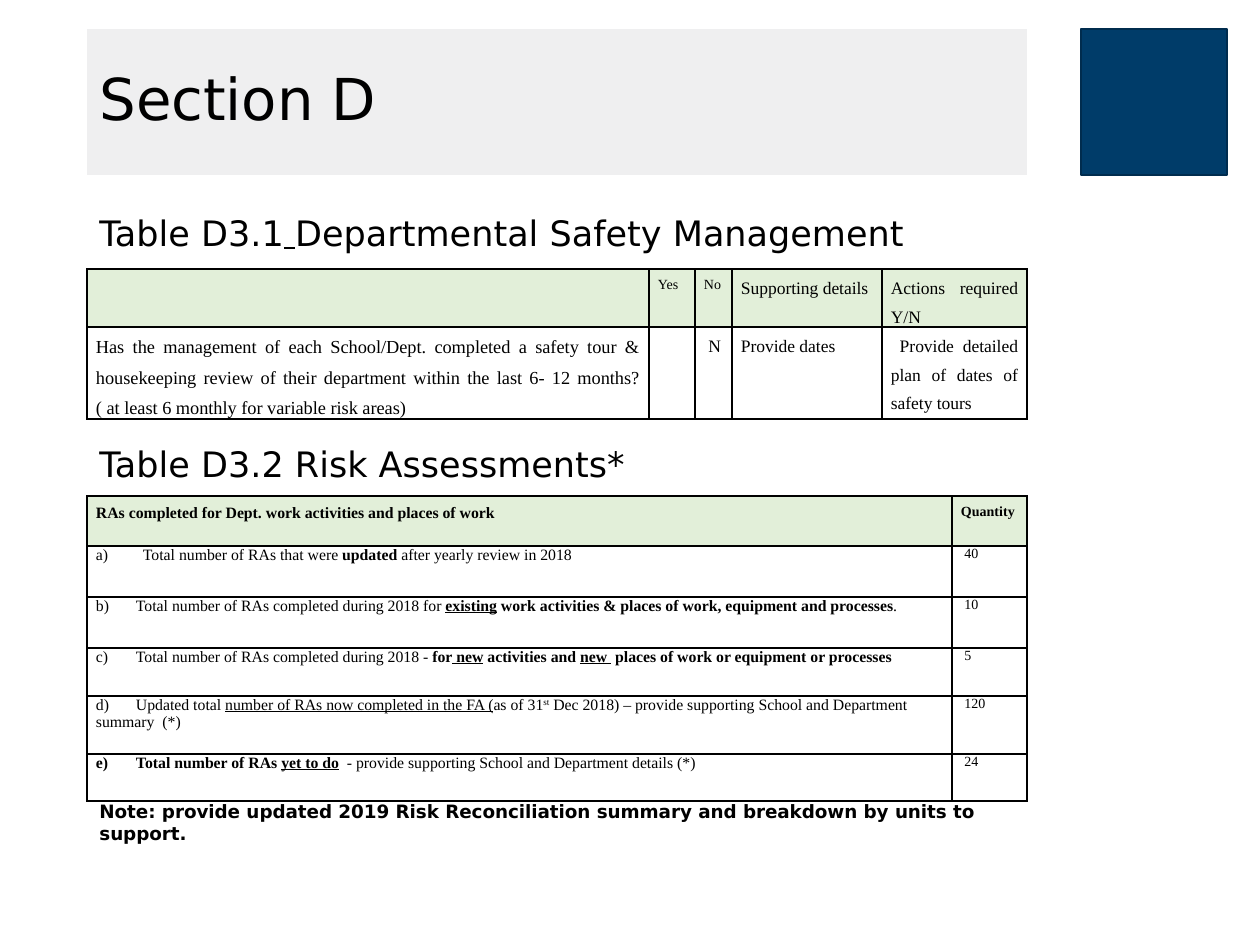
from dataclasses import dataclass
from typing import NamedTuple

import lxml.etree
import pptx
import pptx.dml.color
import pptx.enum.shapes
import pptx.enum.text
import pptx.oxml.ns
import pptx.util

SANS = "DejaVu Sans"
SERIF = "Times New Roman"
BLACK = "000000"
HEADER_GREEN = "E2EFD9"
LEFT, WIDTH = 87, 940
JUSTIFY = pptx.enum.text.PP_ALIGN.JUSTIFY
TOP = pptx.enum.text.MSO_ANCHOR.TOP
MIDDLE = pptx.enum.text.MSO_ANCHOR.MIDDLE


class Span(NamedTuple):
    text: str
    bold: bool = False
    underline: bool = False
    raised: bool = False


@dataclass
class Cell:
    spans: list[Span]
    size: float
    justified: bool = False
    spacing: float = 1.0
    tab: int = 0


@dataclass
class Table:
    top: int
    columns: list[int]
    heights: list[int]
    rows: list[list[Cell]]


@dataclass
class Caption:
    top: int
    height: int
    spans: list[Span]
    size: float
    anchor: pptx.enum.text.MSO_ANCHOR = TOP


def px(length: int) -> pptx.util.Emu:
    return pptx.util.Emu(round(length * 914400 / 126))


def rgb(value: str) -> pptx.dml.color.RGBColor:
    return pptx.dml.color.RGBColor.from_string(value)


def add_element(parent, tag: str, **attributes: str):
    return lxml.etree.SubElement(parent, pptx.oxml.ns.qn(tag), attributes)


def write(para, spans: list[Span], size: float, font: str) -> None:
    para.font.name = font
    para.font.size = pptx.util.Pt(size)
    para.font.color.rgb = rgb(BLACK)
    for span in spans:
        run = para.add_run()
        run.text = span.text
        if span.bold:
            run.font.bold = True
        if span.underline:
            run.font.underline = True
        if span.raised:
            run.font._element.set("baseline", "30000")


def add_rectangle(page, left: int, width: int, fill: str, line: str = ""):
    box = page.shapes.add_shape(
        pptx.enum.shapes.MSO_SHAPE.RECTANGLE, px(left), px(29), px(width), px(146))
    box.shadow.inherit = False
    box.fill.solid()
    box.fill.fore_color.rgb = rgb(fill)
    if line:
        box.line.color.rgb = rgb(line)
        box.line.width = pptx.util.Pt(1)
    else:
        box.line.fill.background()
    return box


def add_title(page, text: str) -> None:
    frame = add_rectangle(page, LEFT, WIDTH, "EFEFF0").text_frame
    frame.vertical_anchor = MIDDLE
    para = frame.paragraphs[0]
    para.alignment = pptx.enum.text.PP_ALIGN.LEFT
    para.line_spacing = 0.9
    write(para, [Span(text)], 33, SANS)


def add_caption(page, caption: Caption) -> None:
    box = page.shapes.add_textbox(px(LEFT), px(caption.top), px(WIDTH), px(caption.height))
    frame = box.text_frame
    frame.word_wrap = True
    frame.vertical_anchor = caption.anchor
    if caption.anchor == MIDDLE:
        frame.margin_bottom = 0
    write(frame.paragraphs[0], caption.spans, caption.size, SANS)


def add_borders(cell) -> None:
    properties = cell._tc.get_or_add_tcPr()
    for index, side in enumerate(("a:lnL", "a:lnR", "a:lnT", "a:lnB")):
        line = properties.makeelement(pptx.oxml.ns.qn(side), {"w": "12700"})
        add_element(add_element(line, "a:solidFill"), "a:srgbClr", val=BLACK)
        properties.insert(index, line)


def fill_cell(target, cell: Cell, header: bool) -> None:
    target.margin_left = target.margin_right = px(9)
    target.margin_top = target.margin_bottom = 0
    if header:
        target.fill.solid()
        target.fill.fore_color.rgb = rgb(HEADER_GREEN)
    else:
        target.fill.background()
    add_borders(target)
    para = target.text_frame.paragraphs[0]
    if cell.tab:
        stops = add_element(para._p.get_or_add_pPr(), "a:tabLst")
        add_element(stops, "a:tab", pos=str(px(cell.tab)), algn="l")
    if cell.justified:
        para.alignment = JUSTIFY
    para.line_spacing = cell.spacing
    write(para, cell.spans, cell.size, SERIF)


def add_table(page, table: Table) -> None:
    grid = page.shapes.add_table(
        len(table.heights), len(table.columns), px(LEFT), px(table.top),
        px(sum(table.columns)), px(sum(table.heights))).table
    grid.horz_banding = False
    for column, width in zip(grid.columns, table.columns):
        column.width = px(width)
    for row, height in zip(grid.rows, table.heights):
        row.height = px(height)
    for row_index, row in enumerate(table.rows):
        for column_index, cell in enumerate(row):
            fill_cell(grid.cell(row_index, column_index), cell, row_index == 0)


def safety_cell(text: str, size: float = 10) -> Cell:
    return Cell([Span(text)] if text else [], size, justified=True, spacing=1.5)


def risk_row(spans: list[Span], count: str, tab: int = 40) -> list[Cell]:
    return [Cell(spans, 9, tab=tab), Cell([Span(count)], 8)]


SAFETY = Table(269, [562, 46, 37, 150, 145], [58, 92], [
    [safety_cell(""), safety_cell("Yes", 8), safety_cell("No", 8),
     safety_cell("Supporting details"), safety_cell("Actions required Y/N")],
    [safety_cell("Has the management of each School/Dept. completed a safety tour & "
                 "housekeeping review of their department within the last 6- 12 months? "
                 "( at least 6 monthly for variable risk areas)", 10.5),
     safety_cell(""), safety_cell(" N"), safety_cell("Provide dates"),
     safety_cell(" Provide detailed plan of dates of safety tours")],
])

RISKS = Table(496, [865, 75], [50, 51, 51, 48, 58, 47], [
    [Cell([Span("RAs completed for Dept. work activities and places of work", True)],
          9, spacing=1.5),
     Cell([Span("Quantity", True)], 8, spacing=1.5)],
    risk_row([Span("a)\tTotal number of RAs that were "), Span("updated", True),
              Span(" after yearly review in 2018")], " 40", tab=47),
    risk_row([Span("b)\tTotal number of RAs completed during 2018 for "),
              Span("existing", True, True),
              Span(" work activities & places of work, equipment and processes", True),
              Span(".")], " 10"),
    risk_row([Span("c)\tTotal number of RAs completed during 2018 - "),
              Span("for", True), Span(" new", True, True),
              Span(" activities and ", True), Span("new ", True, True),
              Span(" places of work or equipment or processes", True)], " 5"),
    risk_row([Span("d)\tUpdated total "),
              Span("number of RAs now completed in the FA (", underline=True),
              Span("as of 31"), Span("st", raised=True),
              Span(" Dec 2018) – provide supporting School and Department summary  (*)")],
             " 120"),
    risk_row([Span("e)\tTotal number of RAs ", True), Span("yet to do", True, True),
              Span("  - provide supporting School and Department details (*)")], " 24"),
])

CAPTIONS = [
    Caption(205, 49, [Span("Table D3.1"), Span(" ", underline=True),
                      Span("Departmental Safety Management")], 20, MIDDLE),
    Caption(436, 55, [Span("Table D3.2 Risk Assessments*")], 20),
    Caption(794, 57, [Span("Note: provide updated 2019 Risk Reconciliation summary and "
                           "breakdown by units to support.", True)], 10.5),
]


def main() -> None:
    deck = pptx.Presentation()
    deck.slide_width, deck.slide_height = px(1260), px(945)
    page = deck.slides.add_slide(deck.slide_layouts[6])
    add_rectangle(page, 1081, 146, "003C69", "002C4E")
    add_title(page, "Section D")
    for table in (SAFETY, RISKS):
        add_table(page, table)
    for caption in CAPTIONS:
        add_caption(page, caption)
    deck.save("out.pptx")


if __name__ == "__main__":
    main()
